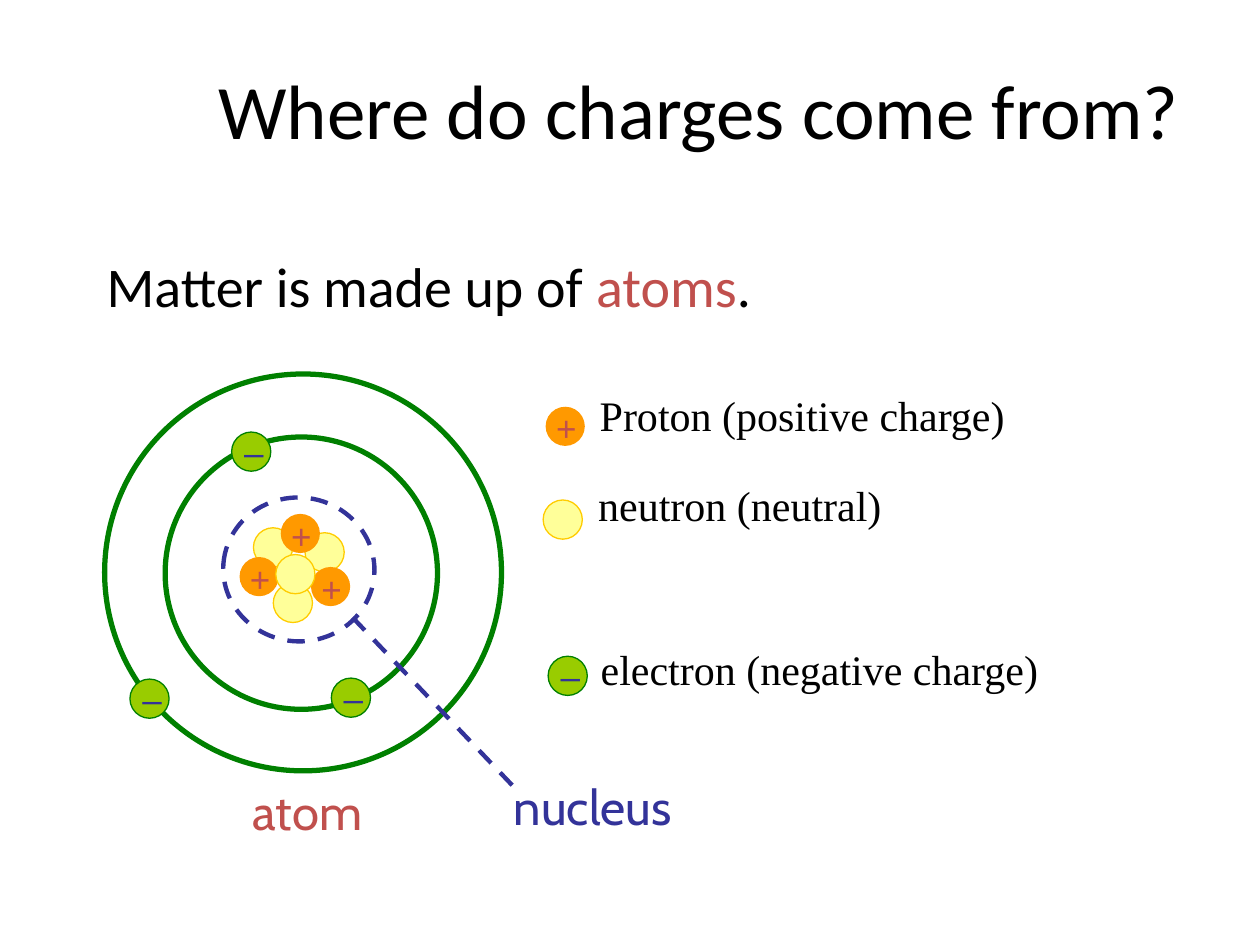
from dataclasses import dataclass
from typing import NamedTuple, Optional

from lxml import etree
from pptx import Presentation
from pptx.dml.color import RGBColor
from pptx.enum.dml import MSO_LINE
from pptx.enum.shapes import MSO_CONNECTOR, MSO_SHAPE
from pptx.enum.text import MSO_ANCHOR, PP_ALIGN
from pptx.oxml.ns import qn
from pptx.util import Cm, Pt

OVAL = MSO_SHAPE.OVAL
STRAIGHT = MSO_CONNECTOR.STRAIGHT
DASH = MSO_LINE.DASH
LEFT, CENTER = PP_ALIGN.LEFT, PP_ALIGN.CENTER
TOP, MIDDLE = MSO_ANCHOR.TOP, MSO_ANCHOR.MIDDLE


@dataclass(frozen=True)
class Theme:
    black: str = "000000"
    red: str = "C0504D"
    blue: str = "333399"
    green: str = "008000"
    lime: str = "99CC00"
    orange: str = "FF9900"
    yellow: str = "FFFF99"
    gold: str = "FFCC00"
    heading_font: str = "Calibri"
    legend_font: str = "Times New Roman"
    label_font: str = "Cabin"
    sign_font: str = "Arial"
    title_size: int = 44
    body_size: int = 32
    label_size: int = 28
    legend_size: int = 24
    sign_size: int = 20
    orbit_width: float = 3
    nucleus_width: float = 2.5
    particle_width: float = 0.75


THEME = Theme()


class Box(NamedTuple):
    """Left, top, width and height in centimetres."""
    left: float
    top: float
    width: float
    height: float

    def lengths(self) -> list:
        return [Cm(value) for value in self]


class Run(NamedTuple):
    text: str
    color: str


class Stroke(NamedTuple):
    color: str
    width: float
    dashed: bool = False


class Particle(NamedTuple):
    fill: str
    stroke: Optional[Stroke] = None
    sign: Optional[Run] = None
    sign_shift: tuple = (0, 0)


class LegendEntry(NamedTuple):
    particle: Particle
    spot: tuple
    label: str
    label_box: Box


DIAMETER = 0.79
PROTON = Particle(THEME.orange, None, Run("+", THEME.red), (-0.04, -0.12))
NEUTRON = Particle(THEME.yellow, Stroke(THEME.gold, THEME.particle_width))
ELECTRON = Particle(THEME.lime, Stroke(THEME.green, THEME.particle_width),
                    Run("–", THEME.blue), (0, -0.16))

ORBITS = [Box(2.11, 7.54, 8, 8), Box(3.33, 8.81, 5.49, 5.49)]
NUCLEUS_OUTLINE = Box(4.5, 10.03, 3.05, 2.9)
NUCLEUS_POINTER = (7.11, 12.45, 10.44, 15.95)

ATOM_PARTICLES = [
    (NEUTRON, [(5.11, 10.64), (6.15, 10.74), (5.51, 11.76)]),
    (PROTON, [(4.83, 11.23), (5.66, 10.36), (6.27, 11.43)]),
    (NEUTRON, [(5.56, 11.18)]),
    (ELECTRON, [(4.67, 8.71), (6.68, 13.67), (2.62, 13.69)]),
]

LEGEND = [
    LegendEntry(PROTON, (11, 8.2), "Proton (positive charge)",
                Box(11.84, 7.72, 12.73, 2.34)),
    LegendEntry(NEUTRON, (10.95, 10.08), "neutron (neutral)",
                Box(11.81, 9.55, 11.96, 3.68)),
    LegendEntry(ELECTRON, (11.05, 13.23), "electron (negative charge)",
                Box(11.86, 12.85, 13.18, 2.34)),
]


def add_text(slide, box: Box, runs: list[Run], font: str, size: float,
             align=LEFT, anchor=TOP) -> None:
    frame = slide.shapes.add_textbox(*box.lengths()).text_frame
    for name, value in {"word_wrap": True, "vertical_anchor": anchor}.items():
        setattr(frame, name, value)
    paragraph = frame.paragraphs[0]
    paragraph.alignment = align
    for text, color in runs:
        run = paragraph.add_run()
        run.text = text
        for name, value in {"name": font, "size": Pt(size)}.items():
            setattr(run.font, name, value)
        run.font.color.rgb = RGBColor.from_string(color)


def apply_stroke(line, stroke: Stroke) -> None:
    line.color.rgb = RGBColor.from_string(stroke.color)
    formats = {"width": Pt(stroke.width)}
    if stroke.dashed:
        formats["dash_style"] = DASH
    for name, value in formats.items():
        setattr(line, name, value)


def add_oval(slide, box: Box, fill: Optional[str] = None,
             stroke: Optional[Stroke] = None, rotation: float = 0) -> None:
    oval = slide.shapes.add_shape(OVAL, *box.lengths())
    oval.shadow.inherit = False
    oval.rotation = rotation
    if fill:
        oval.fill.solid()
        oval.fill.fore_color.rgb = RGBColor.from_string(fill)
    else:
        oval.fill.background()
    if stroke:
        apply_stroke(oval.line, stroke)
    else:
        oval.line.fill.background()


def add_particle(slide, particle: Particle, spot: tuple) -> None:
    left, top = spot
    add_oval(slide, Box(left, top, DIAMETER, DIAMETER), particle.fill, particle.stroke)
    if particle.sign:
        across, down = particle.sign_shift
        add_text(slide, Box(left + across, top + down, 0.91, 1.09),
                 [particle.sign], THEME.sign_font, THEME.sign_size)


def add_pointer(slide, ends: tuple, stroke: Stroke) -> None:
    pointer = slide.shapes.add_connector(STRAIGHT, *[Cm(value) for value in ends])
    apply_stroke(pointer.line, stroke)
    etree.SubElement(pointer._element.spPr, qn("a:effectLst"))


def main() -> None:
    deck = Presentation()
    deck.slide_width, deck.slide_height = Cm(25.4), Cm(19.05)
    slide = deck.slides.add_slide(deck.slide_layouts[6])

    add_text(slide, Box(3.68, 0, 20.83, 4.37),
             [Run("Where do charges come from?", THEME.black)],
             THEME.heading_font, THEME.title_size, CENTER, MIDDLE)
    add_text(slide, Box(1.9, 4.95, 21.59, 2.24),
             [Run("Matter is made up of ", THEME.black), Run("atoms", THEME.red),
              Run(".", THEME.black)],
             THEME.heading_font, THEME.body_size)

    for orbit in ORBITS:
        add_oval(slide, orbit, stroke=Stroke(THEME.green, THEME.orbit_width))
    for particle, spots in ATOM_PARTICLES:
        for spot in spots:
            add_particle(slide, particle, spot)

    for entry in LEGEND:
        add_particle(slide, entry.particle, entry.spot)
        add_text(slide, entry.label_box, [Run(entry.label, THEME.black)],
                 THEME.legend_font, THEME.legend_size)

    nucleus_stroke = Stroke(THEME.blue, THEME.nucleus_width, dashed=True)
    add_oval(slide, NUCLEUS_OUTLINE, stroke=nucleus_stroke, rotation=4.5)
    add_pointer(slide, NUCLEUS_POINTER, nucleus_stroke)
    for label, box in [(Run("atom", THEME.red), Box(4.85, 15.62, 3.07, 1.45)),
                       (Run("nucleus", THEME.blue), Box(10.11, 15.52, 4.9, 1.45))]:
        add_text(slide, box, [label], THEME.label_font, THEME.label_size)

    deck.save("out.pptx")


if __name__ == "__main__":
    main()
